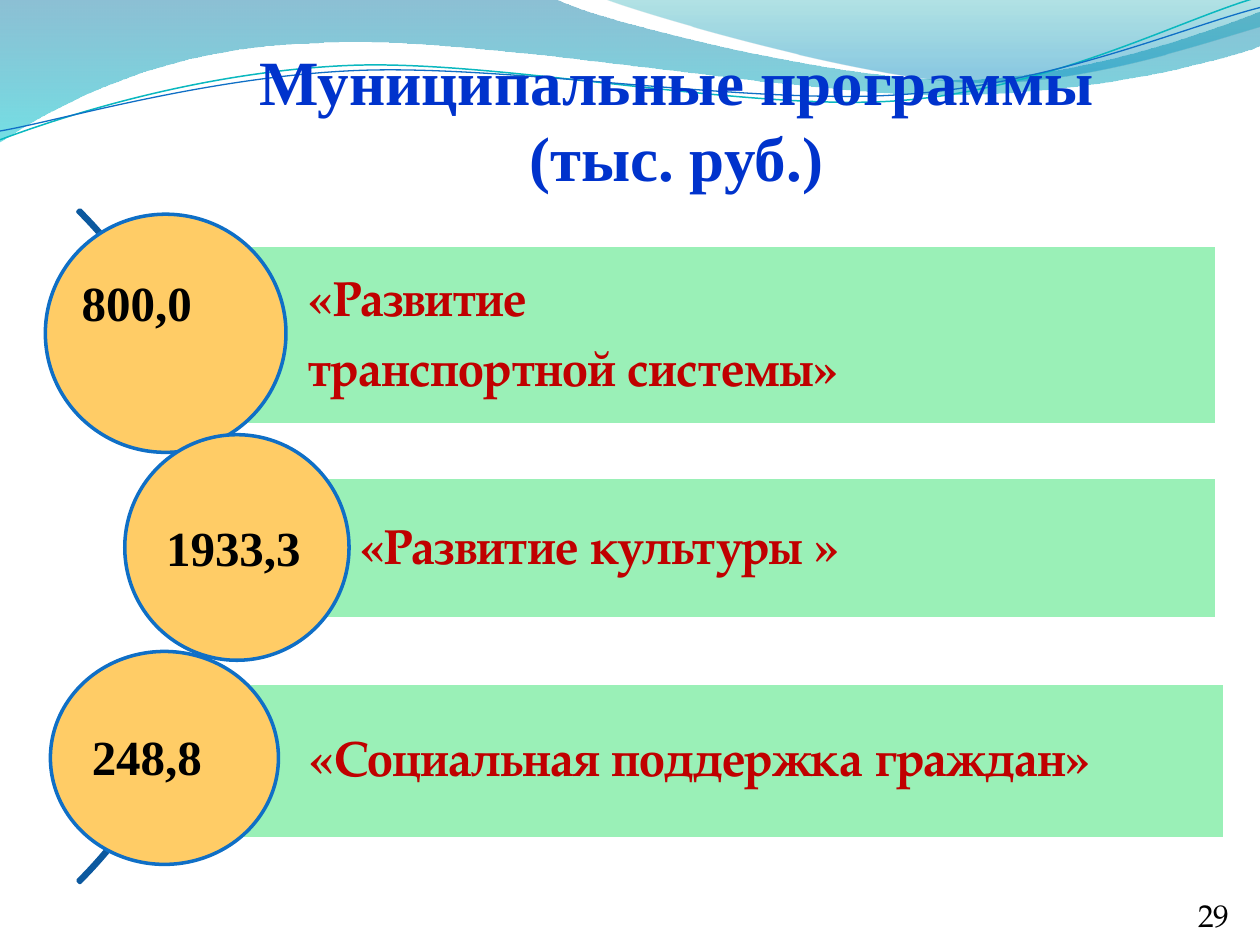
from typing import NamedTuple

from lxml import etree
from pptx import Presentation
from pptx import util as u
from pptx.dml.color import RGBColor
from pptx.enum import shapes, text
from pptx.oxml.ns import qn

TITLE_BLUE = RGBColor(0x00, 0x33, 0xCC)
ARC_BLUE = RGBColor(0x0C, 0x59, 0x9F)
OUTLINE_BLUE = RGBColor(0x0F, 0x6F, 0xC6)
TEAL = RGBColor(0x0A, 0xB8, 0xBF)
WAVE_BLUE = RGBColor(0x00, 0x74, 0xA1)
WAVE_CYAN = RGBColor(0x00, 0xC6, 0xCF)
CREST_TEAL = RGBColor(0x00, 0xA1, 0xA9)
CREST_BLUE = RGBColor(0x00, 0x8B, 0xBF)
GREEN = RGBColor(0x9A, 0xF0, 0xB7)
ORANGE = RGBColor(0xFF, 0xCC, 0x66)
RED = RGBColor(0xC0, 0x00, 0x00)
BLACK = RGBColor(0x00, 0x00, 0x00)
WHITE = RGBColor(0xFF, 0xFF, 0xFF)
SERIF = "Times New Roman"
PAGELLA = "TeX Gyre Pagella"


class Area(NamedTuple):
    left: float
    top: float
    width: float
    height: float


class Stop(NamedTuple):
    position: float
    color: RGBColor
    opacity: int


class Wave(NamedTuple):
    """Segments hold one point for a line, three for a Bezier curve."""
    start: tuple
    segments: list
    stops: tuple = ()
    line: RGBColor | None = None
    weight: float = 0


class Program(NamedTuple):
    lines: list
    amount: str
    bar: Area
    circle: Area
    label: Area


WAVES = [
    Wave((0, 0), [
        [(4.4, -0.01)],
        [(4.76, 0.17), (6.64, 0.63), (7.58, 0.63)],
        [(8.53, 0.63), (9.58, 0.26), (10, 0.09)],
        [(10.01, 0.36)],
        [(9.83, 0.44), (8.7, 0.76), (7.46, 0.75)],
        [(6.22, 0.75), (3.82, 0.28), (2.57, 0.34)],
        [(1.29, 0.36), (0.46, 0.83), (-0.01, 1.13)],
        [(0, 0)],
    ], stops=(Stop(0, WAVE_BLUE, 45), Stop(1, WAVE_CYAN, 55))),
    Wave((4.79, -0.01), [
        [(5.09, 0.11), (6.82, 0.62), (7.69, 0.65)],
        [(8.56, 0.69), (9.61, 0.32), (10, 0.21)],
        [(10, 0)],
        [(4.79, -0.01)],
    ], stops=(Stop(0, CREST_TEAL, 30), Stop(0.8, CREST_BLUE, 45))),
    Wave((0, 1.11), [
        [(0.48, 0.93), (1.58, 0.57), (2.77, 0.52)],
        [(3.95, 0.47), (5.93, 0.89), (7.13, 0.8)],
        [(8.33, 0.71), (9.38, 0.15), (9.98, -0.02)],
    ], line=TEAL, weight=0.85),
    Wave((0, 1.04), [
        [(0.47, 0.96), (1.64, 0.61), (2.83, 0.56)],
        [(4.03, 0.51), (5.97, 0.84), (7.17, 0.75)],
        [(8.36, 0.67), (9.41, 0.21), (10, 0.06)],
    ], line=OUTLINE_BLUE, weight=0.75),
]

PROGRAMS = [
    Program(["«Развитие", "транспортной системы»"], "800,0", Area(1.56, 1.95, 8.1, 1.42),
            Area(0.36, 1.7, 1.91, 1.89), Area(0.55, 2.11, 1.62, 0.57)),
    Program(["«Развитие культуры »"], "1933,3", Area(1.97, 3.79, 7.69, 1.12),
            Area(0.99, 3.45, 1.78, 1.79), Area(1.22, 4.06, 1.42, 0.57)),
    Program(["«Социальная поддержка граждан»"], "248,8", Area(1.57, 5.42, 8.15, 1.24),
            Area(0.4, 5.17, 1.81, 1.69), Area(0.63, 5.72, 1.42, 0.57)),
]


def bend_segments(shape, segments: list) -> None:
    """Turn each run of three straight steps that stands for a curve into a Bezier."""
    steps = iter(list(shape.element.iter(qn("a:lnTo"))))
    for segment in segments:
        first, *others = [next(steps) for _ in segment]
        if others:
            first.tag = qn("a:cubicBezTo")
            for other in others:
                first.append(other[0])
                other.getparent().remove(other)


def add_wave(page, wave: Wave) -> None:
    points = [wave.start, *(point for segment in wave.segments for point in segment)]
    points = [(u.Inches(x), u.Inches(y)) for x, y in points]
    builder = page.shapes.build_freeform(*points[0])
    builder.add_line_segments(points[1:], close=bool(wave.stops))
    shape = builder.convert_to_shape()
    bend_segments(shape, wave.segments)
    shape.shadow.inherit = False
    if not wave.stops:
        shape.fill.background()
        shape.line.color.rgb = wave.line
        shape.line.width = u.Pt(wave.weight)
        return
    shape.line.fill.background()
    shape.fill.gradient()
    shape.fill.gradient_angle = 270
    for target, stop in zip(shape.fill.gradient_stops, wave.stops):
        target.position = stop.position
        target.color.rgb = stop.color
    for color, stop in zip(shape.element.iter(qn("a:srgbClr")), wave.stops):
        etree.SubElement(color, qn("a:alpha"), val=str(stop.opacity * 1000))


def add_figure(page, kind, area: Area, line: RGBColor, fill: RGBColor | None = None):
    shape = page.shapes.add_shape(kind, *map(u.Inches, area))
    shape.shadow.inherit = False
    if fill is None:
        shape.fill.background()
    else:
        shape.fill.solid()
        shape.fill.fore_color.rgb = fill
    shape.line.color.rgb = line
    shape.line.width = u.Pt(2)
    return shape


def add_text(page, area: Area, lines: list, *, size: float, color: RGBColor,
             font: str = SERIF, bold: bool = True, wrap: bool = True,
             align=text.PP_ALIGN.LEFT, spacing: float | None = None, after: float = 0):
    box = page.shapes.add_textbox(*map(u.Inches, area))
    frame = box.text_frame
    frame.word_wrap = wrap
    for index, line in enumerate(lines):
        para = frame.paragraphs[0] if index == 0 else frame.add_paragraph()
        para.alignment = align
        para.line_spacing = spacing
        para.space_after = u.Pt(after)
        span = para.add_run()
        span.text = line
        span.font.name = font
        span.font.size = u.Pt(size)
        span.font.bold = bold
        span.font.color.rgb = color
    return frame


def add_program(page, program: Program) -> None:
    add_figure(page, shapes.MSO_SHAPE.RECTANGLE, program.bar, WHITE, GREEN)
    frame = add_text(page, program.bar, program.lines, size=28, color=RED, font=PAGELLA,
                     spacing=0.9, after=9.8)
    frame.vertical_anchor = text.MSO_ANCHOR.MIDDLE
    frame.margin_left = u.Inches(0.89)
    frame.margin_right = frame.margin_top = frame.margin_bottom = u.Inches(0.08)
    add_figure(page, shapes.MSO_SHAPE.OVAL, program.circle, OUTLINE_BLUE, ORANGE)


def main() -> None:
    deck = Presentation()
    deck.slide_width, deck.slide_height = u.Inches(10), u.Inches(7.5)
    page = deck.slides.add_slide(deck.slide_layouts[6])
    for wave in WAVES:
        add_wave(page, wave)
    add_text(page, Area(1.92, 0.29, 7.02, 1.31), ["Муниципальные программы ", "(тыс. руб.) "],
             wrap=False, size=36, color=TITLE_BLUE, align=text.PP_ALIGN.CENTER)
    arc = add_figure(page, shapes.MSO_SHAPE.BLOCK_ARC, Area(-5.81, 0.56, 7.55, 7.55), ARC_BLUE)
    for index, value in enumerate((189, 27, 0.003)):
        arc.adjustments[index] = value
    for program in PROGRAMS:
        add_program(page, program)
    for program in PROGRAMS:
        add_text(page, program.label, [program.amount], size=28, color=BLACK)
    add_text(page, Area(9.41, 7.06, 0.51, 0.4), ["29"], size=18, color=BLACK,
             font=PAGELLA, bold=False)
    deck.save("out.pptx")


if __name__ == "__main__":
    main()
